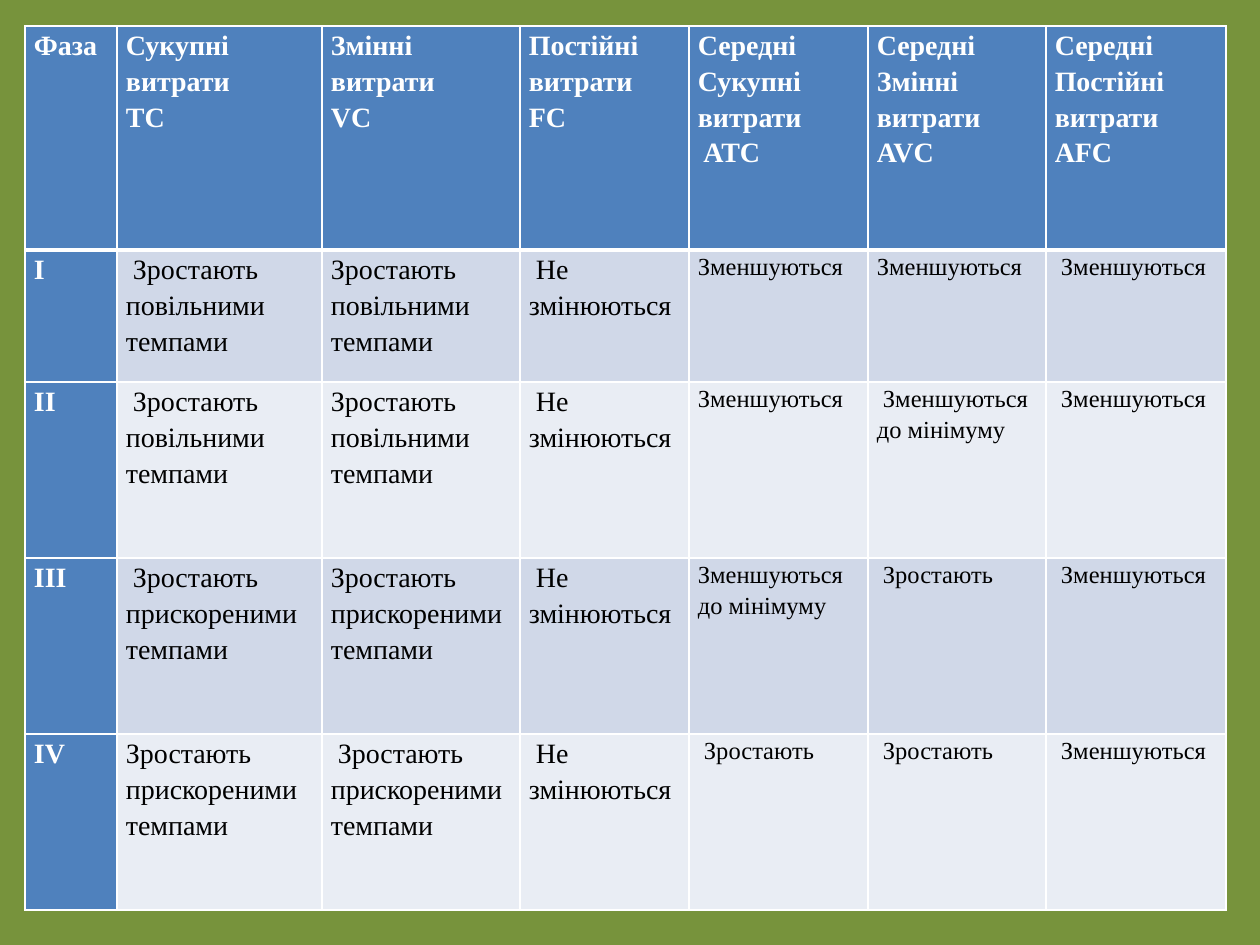
from dataclasses import dataclass

from lxml import etree
from pptx import Presentation
from pptx.dml.color import RGBColor
from pptx.oxml.ns import qn
from pptx.util import Inches, Pt

PX = Inches(1) / 126


@dataclass(frozen=True)
class Theme:
    font: str = "Times New Roman"
    background: str = "77933C"
    header: str = "4F81BD"
    bands: tuple = ("D0D8E8", "E9EDF4")
    light: str = "FFFFFF"
    dark: str = "000000"
    body_size: int = 16
    small_size: int = 14
    border: int = 1
    header_border: int = 3
    line_spacing: float = 1.15


COLUMNS = [92, 205, 198, 169, 179, 178, 180]
ROWS = [224, 132, 176, 176, 176]
FIRST_SMALL_COLUMN = 4
CELLS = [
    ["Фаза", "Сукупні витрати\nТС", "Змінні витрати\nVC",
     "Постійні витрати\nFC", "Середні\nСукупні витрати\n ATC",
     "Середні\nЗмінні витрати\nAVC", "Середні\nПостійні витрати\nAFC"],
    ["I", " Зростають повільними темпами", "Зростають повільними темпами",
     " Не змінюються", "Зменшуються", "Зменшуються", " Зменшуються"],
    ["II", " Зростають повільними темпами", "Зростають повільними темпами",
     " Не змінюються", "Зменшуються", " Зменшуються до мінімуму",
     " Зменшуються"],
    ["III", " Зростають прискореними темпами",
     "Зростають прискореними темпами", " Не змінюються",
     "Зменшуються до мінімуму", " Зростають", " Зменшуються"],
    ["IV", "Зростають прискореними темпами",
     " Зростають прискореними темпами", " Не змінюються",
     " Зростають", " Зростають", " Зменшуються"],
]


def px(value):
    return round(value * PX)


def write_text(tf, text, *, font, size, color, bold, spacing):
    tf.word_wrap = True
    for i, line in enumerate(text.split("\n")):
        p = tf.add_paragraph() if i else tf.paragraphs[0]
        p.line_spacing = spacing
        r = p.add_run()
        r.text = line
        r.font.name = font
        r.font.size = Pt(size)
        r.font.bold = bold
        r.font.color.rgb = RGBColor.from_string(color)


class SlideBuilder:
    def __init__(self, s, theme):
        self.s = s
        self.theme = theme

    def background(self):
        fill = self.s.background.fill
        fill.solid()
        fill.fore_color.rgb = RGBColor.from_string(self.theme.background)

    def borders(self, cell, widths):
        tc_pr = cell._tc.get_or_add_tcPr()
        for i, (side, width) in enumerate(widths.items()):
            ln = etree.Element(qn(f"a:ln{side}"), w=str(Pt(width)))
            fill = etree.SubElement(ln, qn("a:solidFill"))
            etree.SubElement(fill, qn("a:srgbClr"), val=self.theme.light)
            tc_pr.insert(i, ln)

    def cell(self, cell, text, row, col):
        t = self.theme
        heading = row == 0 or col == 0
        small = not heading and col >= FIRST_SMALL_COLUMN
        cell.margin_left = cell.margin_right = px(9)
        cell.margin_top = cell.margin_bottom = 0
        cell.fill.solid()
        color = t.header if heading else t.bands[(row - 1) % 2]
        cell.fill.fore_color.rgb = RGBColor.from_string(color)
        widths = dict.fromkeys("LRTB", t.border)
        if row == 0:
            widths["B"] = t.header_border
        elif row == 1:
            widths["T"] = t.header_border
        self.borders(cell, widths)
        write_text(cell.text_frame, text, font=t.font,
                   size=t.small_size if small else t.body_size,
                   color=t.light if heading else t.dark,
                   bold=heading, spacing=t.line_spacing)

    def table(self, left, top, columns, rows, cells):
        frame = self.s.shapes.add_table(
            len(rows), len(columns), px(left), px(top),
            px(sum(columns)), px(sum(rows)))
        table = frame.table
        table.first_col = True
        for column, width in zip(table.columns, columns):
            column.width = px(width)
        for row, height in zip(table.rows, rows):
            row.height = px(height)
        for i, texts in enumerate(cells):
            for j, text in enumerate(texts):
                self.cell(table.cell(i, j), text, i, j)


def main():
    prs = Presentation()
    prs.slide_width = px(1260)
    prs.slide_height = px(945)
    s = prs.slides.add_slide(prs.slide_layouts[6])
    builder = SlideBuilder(s, Theme())
    builder.background()
    builder.table(25, 26, COLUMNS, ROWS, CELLS)
    prs.save("out.pptx")


if __name__ == "__main__":
    main()
